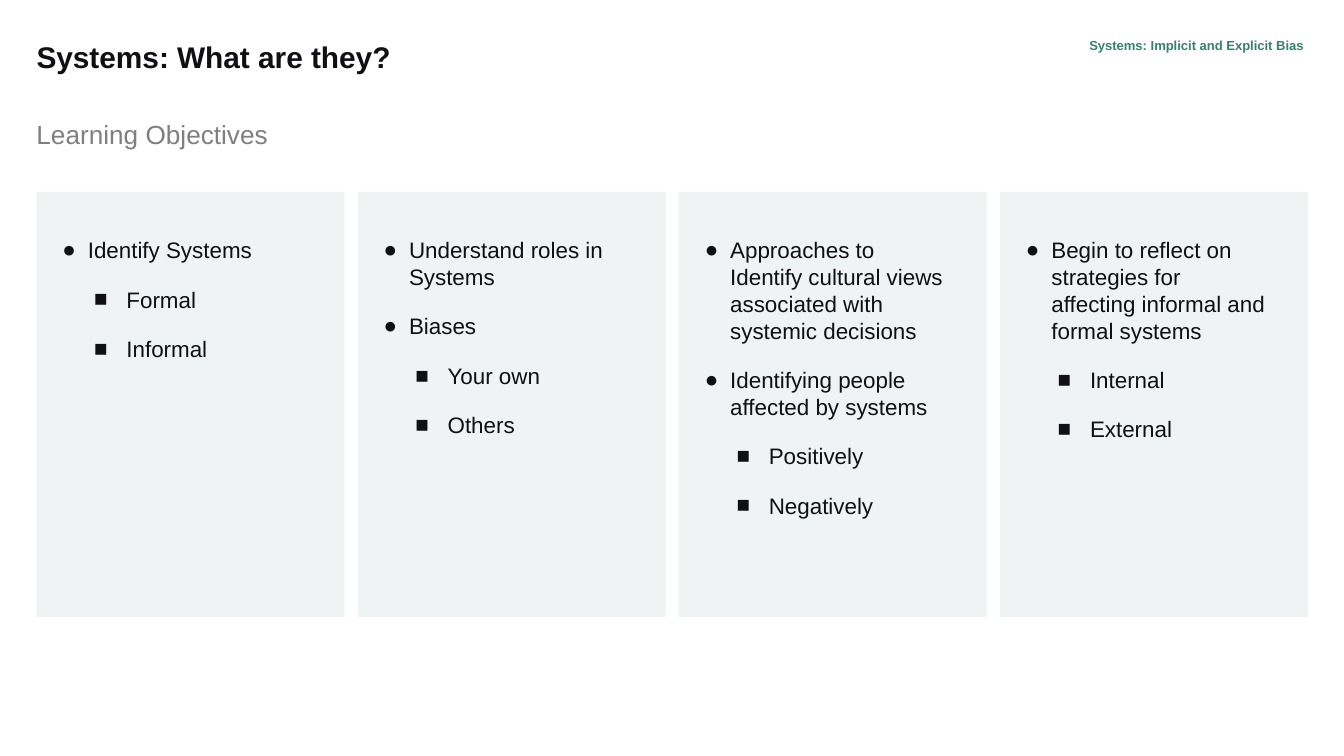
from lxml.etree import SubElement
from pptx import Presentation
from pptx.dml.color import RGBColor
from pptx.enum.shapes import MSO_SHAPE as Shape
from pptx.enum.text import MSO_ANCHOR as Anchor, MSO_AUTO_SIZE as AutoSize, PP_ALIGN as Align
from pptx.oxml.ns import qn
from pptx.util import Cm, Pt

COLORS = {"ink": "0F0F14", "card": "F0F3F3", "green": "37816E", "gray": "7F7F7F"}
FONT = "Arial"

# Bullet sign, left margin and hanging indent for each list level
LEVELS = [("●", 0.51, -0.48), ("■", 1.24, -0.61)]

COLUMNS = [
    [(0, "Identify Systems"), (1, "Formal"), (1, "Informal")],
    [(0, "Understand roles in Systems"), (0, "Biases"), (1, "Your own"), (1, "Others")],
    [
        (0, "Approaches to Identify cultural views associated with systemic decisions"),
        (0, "Identifying people affected by systems"),
        (1, "Positively"),
        (1, "Negatively"),
    ],
    [
        (0, "Begin to reflect on strategies for affecting informal and formal systems"),
        (1, "Internal"),
        (1, "External"),
    ],
]
CARD_LEFT, CARD_TOP, CARD_WIDTH, CARD_HEIGHT, CARD_STEP = 0.69, 3.63, 5.82, 8.03, 6.07


def set_frame(box, place, insets):
    """Place a box and give its text frame plain top-anchored wrapping."""
    box.left, box.top, box.width, box.height = [Cm(length) for length in place]
    left, top, right, bottom = [Cm(inset) for inset in insets]
    values = {
        "margin_left": left, "margin_top": top, "margin_right": right, "margin_bottom": bottom,
        "word_wrap": True, "auto_size": AutoSize.NONE, "vertical_anchor": Anchor.TOP,
    }
    for name, value in values.items():
        setattr(box.text_frame, name, value)


def write(para, text, size, color, bold=False):
    span = para.add_run()
    span.text = text
    for name, value in {"name": FONT, "size": Pt(size), "bold": bold}.items():
        setattr(span.font, name, value)
    span.font.color.rgb = RGBColor.from_string(COLORS[color])


deck = Presentation()
deck.slide_width, deck.slide_height = Cm(25.4), Cm(14.29)
page = deck.slides.add_slide(deck.slide_layouts.get_by_name("Comparison"))
title, *bodies = page.placeholders

# Cards with their bulleted lists
for column, (body, items) in enumerate(zip(bodies, COLUMNS)):
    left = CARD_LEFT + column * CARD_STEP
    card = page.shapes.add_shape(
        Shape.RECTANGLE, Cm(left), Cm(CARD_TOP), Cm(CARD_WIDTH), Cm(CARD_HEIGHT)
    )
    card.shadow.inherit = False
    card.fill.solid()
    card.fill.fore_color.rgb = RGBColor.from_string(COLORS["card"])
    card.line.fill.background()

    # The list has to lie in front of its card
    card.element.addnext(body.element)
    set_frame(body, (left + 0.46, 4.22, 4.88, 6.5), (0, 0.25, 0.25, 0.25))
    frame = body.text_frame
    for row, (level, text) in enumerate(items):
        para = frame.add_paragraph() if row else frame.paragraphs[0]
        sign, margin, indent = LEVELS[level]
        para.level = level
        props = para._p.get_or_add_pPr()
        props.set("marL", str(Cm(margin)))
        props.set("indent", str(Cm(indent)))
        bullet_color = SubElement(props, qn("a:buClr"))
        SubElement(bullet_color, qn("a:srgbClr"), val=COLORS["ink"])
        SubElement(props, qn("a:buFont"), typeface=FONT)
        SubElement(props, qn("a:buChar"), char=sign)
        para.space_before = Pt(12 if row else 0)
        write(para, text, 12, "ink")

# Headings
section = page.shapes.add_textbox(0, 0, 0, 0)
subtitle = page.shapes.add_textbox(0, 0, 0, 0)
headings = [
    (section, (19.23, 0.74, 5.41, 0.41), (0, 0, 0, 0.25), Align.RIGHT, 0.9,
     "Systems: Implicit and Explicit Bias", 7, "green", True),
    (title, (0.69, 0.74, 20.29, 1.5), (0, 0, 0.25, 0.25), Align.LEFT, 1.0,
     "Systems: What are they?", 16, "ink", True),
    (subtitle, (0.69, 2.24, 18.01, 1.19), (0, 0, 0.25, 0.25), Align.LEFT, 1.0,
     "Learning Objectives", 14, "gray", False),
]
for box, place, insets, align, spacing, text, size, color, bold in headings:
    set_frame(box, place, insets)
    para = box.text_frame.paragraphs[0]
    para.alignment = align
    para.line_spacing = spacing
    write(para, text, size, color, bold)

deck.save("out.pptx")
